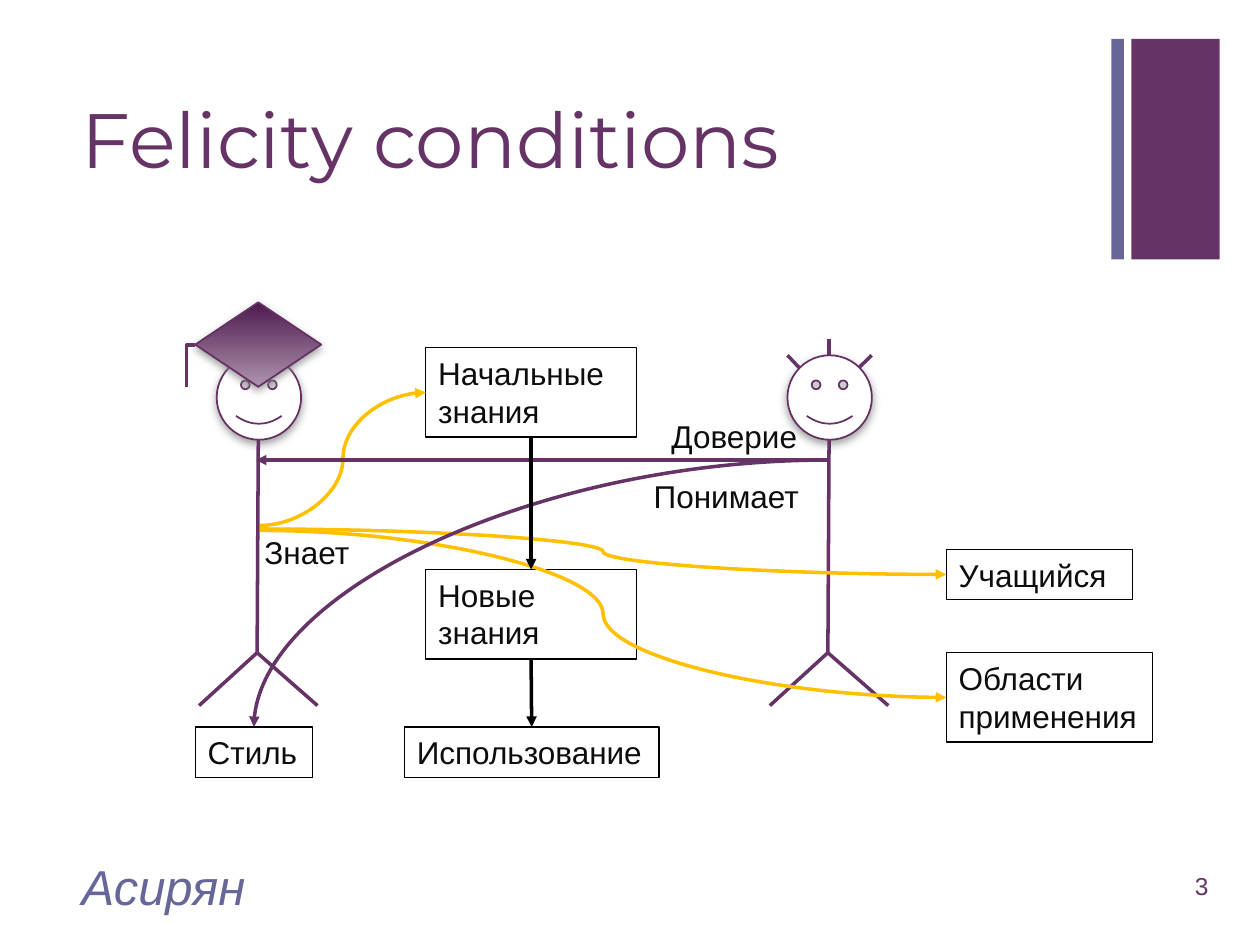
from dataclasses import dataclass
from lxml.etree import SubElement
from pptx import Presentation
from pptx.dml.color import RGBColor
from pptx.enum.shapes import MSO_CONNECTOR, MSO_SHAPE
from pptx.enum.text import MSO_ANCHOR, MSO_AUTO_SIZE, PP_ALIGN
from pptx.oxml.ns import qn
from pptx.util import Inches, Pt


@dataclass(frozen=True)
class Theme:
    purple: str = "663366"
    outline: str = "653165"
    slate: str = "666699"
    gold: str = "FFC000"
    black: str = "000000"
    ink: str = "0D0D0D"
    white: str = "FFFFFF"
    cap: tuple = ("4D1A4D", "AF94AF")
    shadow: str = "808080"
    heading_font: str = "Montserrat"
    body_font: str = "Arial"
    title: int = 44
    footer: int = 28
    body: int = 18
    number: int = 14


T = Theme()


@dataclass(frozen=True)
class Box:
    """An area whose points and inner boxes are given in percent of its size."""
    x: float
    y: float
    w: float
    h: float

    def point(self, px, py):
        return int(self.x + self.w * px / 100), int(self.y + self.h * py / 100)

    def inner(self, px, py, pw, ph):
        return Box(*self.point(px, py), int(self.w * pw / 100), int(self.h * ph / 100))

    def frame(self):
        return self.x, self.y, self.w, self.h


def rgb(color):
    return RGBColor.from_string(color)


def style(p, size, color, font=T.body_font, italic=None):
    p.font.size, p.font.name, p.font.italic = Pt(size), font, italic
    p.font.color.rgb = rgb(color)


def add_text(s, box, text, size=T.body, color=T.ink, wrap=True, italic=None):
    sp = s.shapes.add_textbox(*box.frame())
    tf = sp.text_frame
    tf.word_wrap = wrap
    tf.text = text
    style(tf.paragraphs[0], size, color, italic=italic)
    return sp


def add_shape(s, kind, box, fill=None, line=None):
    sp = s.shapes.add_shape(kind, *box.frame())
    sp.shadow.inherit = False
    if fill:
        sp.fill.solid()
        sp.fill.fore_color.rgb = rgb(fill)
    if line:
        sp.line.color.rgb, sp.line.width = rgb(line), Pt(1)
    else:
        sp.line.fill.background()
    return sp


def add_shadow(sp):
    effects = sp._element.spPr.find(qn("a:effectLst"))
    outer = SubElement(effects, qn("a:outerShdw"), blurRad=str(Pt(5)),
                       dist=str(Pt(2)), dir="5400000", rotWithShape="0")
    color = SubElement(outer, qn("a:srgbClr"), val=T.shadow)
    SubElement(color, qn("a:alpha"), val="75000")


def add_line(s, start, end, color=T.purple, kind=MSO_CONNECTOR.STRAIGHT,
             arrow=False, preset=None):
    cxn = s.shapes.add_connector(kind, *start, *end)
    cxn.line.color.rgb, cxn.line.width = rgb(color), Pt(2)
    spPr = cxn._element.spPr
    if preset:
        spPr.find(qn("a:prstGeom")).set("prst", preset)
    if arrow:
        SubElement(spPr.find(qn("a:ln")), qn("a:tailEnd"), type="triangle")
    SubElement(spPr, qn("a:effectLst"))


def draw_bars(s, box):
    add_shape(s, MSO_SHAPE.RECTANGLE, box.inner(18.6, 0, 81.4, 100), T.purple)
    add_shape(s, MSO_SHAPE.RECTANGLE, box.inner(0, 0, 11.6, 100), T.slate)


def draw_title(s, box, text):
    sp = s.shapes.title
    sp.left, sp.top, sp.width, sp.height = box.frame()
    tf = sp.text_frame
    tf.text = text
    tf.auto_size, tf.vertical_anchor = MSO_AUTO_SIZE.NONE, MSO_ANCHOR.MIDDLE
    p = tf.paragraphs[0]
    p.alignment, p.line_spacing = PP_ALIGN.LEFT, 0.9
    style(p, T.title, T.purple, T.heading_font)


def draw_footer(s, box, author, number):
    name = add_text(s, box.inner(0, 0, 73.3, 100), author, T.footer, T.slate, italic=True)
    page = add_text(s, box.inner(93.3, 0, 6.7, 100), number, T.number, T.purple)
    page.text_frame.paragraphs[0].alignment = PP_ALIGN.RIGHT
    for sp in (name, page):
        sp.text_frame.vertical_anchor = MSO_ANCHOR.MIDDLE


def draw_person(s, box):
    head = add_shape(s, MSO_SHAPE.SMILEY_FACE, box.inner(14.9, 0, 71.3, 24.1),
                     T.white, T.outline)
    add_shadow(head)
    neck, hip = box.point(50, 24.1), box.point(49, 84.9)
    add_line(s, neck, hip)
    for foot in (0, 100):
        add_line(s, hip, box.point(foot, 100))


def draw_cap(s, box):
    cap = add_shape(s, MSO_SHAPE.FLOWCHART_DECISION,
                    box.inner(-3.2, -15.1, 106.4, 24.1), line=T.outline)
    cap.fill.gradient()
    cap.fill.gradient_angle = 270
    for stop, color, position in zip(cap.fill.gradient_stops, T.cap, (0, 1)):
        stop.color.rgb, stop.position = rgb(color), position
    add_shadow(cap)
    # Tassel
    add_line(s, box.point(-3.2, -2.9), box.point(-10.6, 9),
             kind=MSO_CONNECTOR.ELBOW, preset="bentConnector2")


def draw_hair(s, box):
    for root, tip in (((25, 3.6), (14.9, 0)), ((50, 0), (50, -4.7)),
                      ((75, 3.6), (86, 0))):
        add_line(s, box.point(*root), box.point(*tip))


def draw_node(s, box, text):
    sp = add_text(s, box, text)
    sp.text_frame.auto_size = MSO_AUTO_SIZE.SHAPE_TO_FIT_TEXT
    sp.line.color.rgb, sp.line.width = rgb(T.black), Pt(0.75)
    return box


def draw_diagram(s, page):
    teacher, learner = (page.inner(x, 37.6, 9.4, 37.07) for x in (15.8, 61.1))
    draw_person(s, teacher)
    draw_cap(s, teacher)
    draw_person(s, learner)
    draw_hair(s, learner)

    # Boxes: one or two text lines high
    one, two = 5.33, 9.47
    prior, new, usage, manner, student, areas = (
        draw_node(s, page.inner(*place), text) for text, place in (
            ("Начальные знания", (33.8, 36.8, 16.7, two)),
            ("Новые знания", (33.8, 60.27, 16.7, two)),
            ("Использование", (32.1, 76.93, 20.2, one)),
            ("Стиль", (15.5, 76.93, 9.3, one)),
            ("Учащийся", (75.1, 58.13, 14.8, one)),
            ("Области\vприменения", (75.1, 69.07, 16.4, two))))

    # What the teacher knows
    for node, height in ((prior, 48.6), (student, 49.6), (areas, 50)):
        add_line(s, teacher.point(51.5, height), node.point(0, 50), T.gold,
                 MSO_CONNECTOR.CURVE, arrow=True)

    # What the learner trusts and understands
    hand = learner.point(49, 29.9)
    add_line(s, hand, teacher.point(48, 29.9), arrow=True)
    add_line(s, hand, manner.point(50, 0), kind=MSO_CONNECTOR.CURVE,
             arrow=True, preset="curvedConnector2")

    # Labels of the arrows
    for text, x, y, w in (("Знает", 20, 55.73, 8.8), ("Доверие", 52.3, 43.47, 12.1),
                          ("Понимает", 50.9, 49.87, 13.7)):
        add_text(s, page.inner(x, y, w, one), text, wrap=False)

    # Path of the knowledge
    for upper, lower in ((prior, new), (new, usage)):
        add_line(s, upper.point(50, 100), lower.point(50, 0), T.black, arrow=True)


def main():
    prs = Presentation()
    prs.slide_width, prs.slide_height = Inches(10), Inches(7.5)
    s = prs.slides.add_slide(prs.slide_layouts[5])
    page = Box(0, 0, prs.slide_width, prs.slide_height)
    draw_bars(s, page.inner(88.2, 4.13, 8.6, 23.33))
    draw_title(s, page.inner(5.5, 7.07, 82.6, 16.27), "Felicity conditions")
    draw_footer(s, page.inner(5.5, 91.07, 91.4, 5.33), "Асирян", "3")
    draw_diagram(s, page)
    prs.save("out.pptx")


if __name__ == "__main__":
    main()
